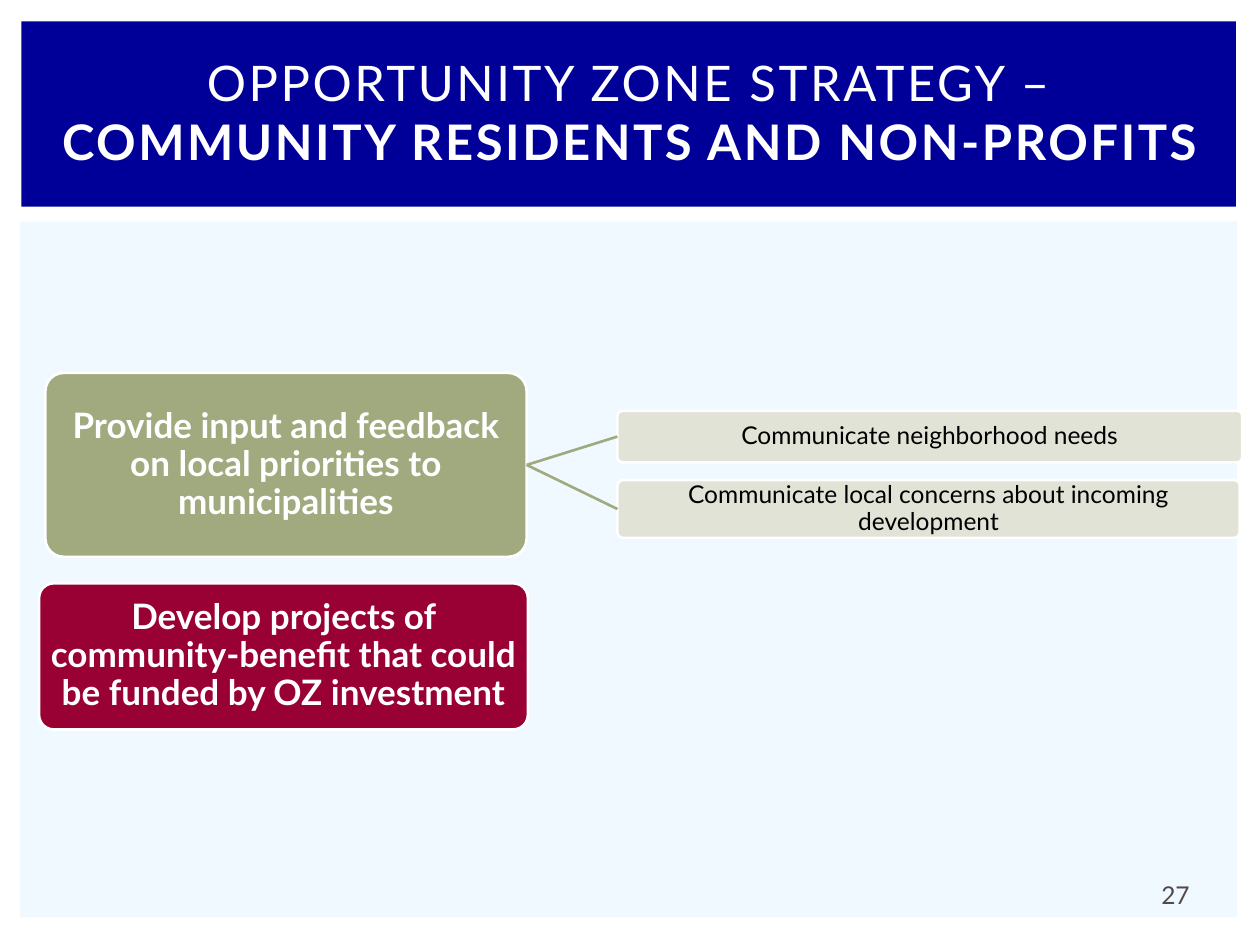
from dataclasses import dataclass

from lxml.etree import SubElement
from pptx import Presentation
from pptx.dml.color import RGBColor
from pptx.enum.shapes import MSO_CONNECTOR, MSO_SHAPE
from pptx.enum.text import MSO_ANCHOR, PP_ALIGN
from pptx.oxml.ns import qn
from pptx.shapes.autoshape import Shape
from pptx.slide import Slide
from pptx.text.text import TextFrame
from pptx.util import Inches, Pt


@dataclass(frozen=True)
class Theme:
    font: str = "Lato"
    white: str = "FFFFFF"
    black: str = "000000"
    grey: str = "534949"
    navy: str = "000099"
    sky: str = "EFF9FF"
    sage: str = "A1AA7E"
    pale: str = "E0E3D5"
    wine: str = "990033"
    title: int = 28
    head: int = 20
    note: int = 14
    rule: float = 1.5
    track: int = 150


@dataclass(frozen=True)
class Area:
    left: float
    top: float
    width: float
    height: float

    def span(self) -> tuple[int, ...]:
        return tuple(Inches(n) for n in (self.left, self.top, self.width, self.height))


@dataclass(frozen=True)
class Node:
    area: Area
    text: str
    fill: str
    ink: str
    size: int
    bold: bool = False


THEME = Theme()


def color(code: str) -> RGBColor:
    return RGBColor.from_string(code)


def style(frame: TextFrame, ink: str, size: int) -> None:
    frame.word_wrap = True
    frame.vertical_anchor = MSO_ANCHOR.MIDDLE
    for para in frame.paragraphs:
        para.alignment = PP_ALIGN.CENTER
        para.font.name = THEME.font
        para.font.size = Pt(size)
        para.font.color.rgb = color(ink)


def panel(slide: Slide, area: Area, fill: str, kind=MSO_SHAPE.RECTANGLE) -> Shape:
    shape = slide.shapes.add_shape(kind, *area.span())
    shape.shadow.inherit = False
    shape.fill.solid()
    shape.fill.fore_color.rgb = color(fill)
    shape.line.fill.background()
    return shape


def box(slide: Slide, node: Node) -> Shape:
    shape = panel(slide, node.area, node.fill, MSO_SHAPE.ROUNDED_RECTANGLE)
    shape.adjustments[0] = 0.1
    shape.line.color.rgb = color(THEME.white)
    shape.line.width = Pt(THEME.rule)
    frame = shape.text_frame
    frame.text = node.text
    frame.margin_left = frame.margin_right = Inches(0.01)
    frame.margin_top = frame.margin_bottom = Inches(0.01)
    style(frame, node.ink, node.size)
    para = frame.paragraphs[0]
    para.line_spacing = 0.9
    para.font.bold = node.bold
    return shape


def link(slide: Slide, start: Shape, end: Shape) -> None:
    line = slide.shapes.add_connector(MSO_CONNECTOR.STRAIGHT, 0, 0, 0, 0)
    line.begin_connect(start, 3)
    line.end_connect(end, 1)
    line.line.color.rgb = color(THEME.sage)
    line.line.width = Pt(THEME.rule)
    SubElement(line._element.spPr, qn("a:effectLst"))


def label(slide: Slide, area: Area, runs: list[tuple[str, bool]],
          ink: str, size: int, track: int = 0) -> None:
    frame = slide.shapes.add_textbox(*area.span()).text_frame
    for text, bold in runs:
        run = frame.paragraphs[0].add_run()
        run.text = text
        run.font.bold = bold
        if track:
            run._r.get_or_add_rPr().set("spc", str(track))
    style(frame, ink, size)


def main() -> None:
    deck = Presentation()
    deck.slide_width, deck.slide_height = Inches(10), Inches(7.5)
    slide = deck.slides.add_slide(deck.slide_layouts[6])

    panel(slide, Area(0.16, 1.76, 9.66, 5.52), THEME.sky)
    panel(slide, Area(0.17, 0.17, 9.64, 1.47), THEME.navy)

    root = box(slide, Node(
        Area(0.36, 2.96, 3.82, 1.46),
        "Provide input and feedback on local priorities to municipalities",
        THEME.sage, THEME.white, THEME.head, True))
    leaves = [
        (Area(4.9, 3.26, 4.96, 0.41), "Communicate neighborhood needs"),
        (Area(4.9, 3.81, 4.94, 0.46),
         "Communicate local concerns about incoming development"),
    ]
    for area, text in leaves:
        leaf = box(slide, Node(area, text, THEME.pale, THEME.black, THEME.note))
        link(slide, root, leaf)
    box(slide, Node(
        Area(0.31, 4.63, 3.88, 1.16),
        "Develop projects of community-benefit that could be funded by OZ investment",
        THEME.wine, THEME.white, THEME.head, True))

    label(slide, Area(0.17, 0.31, 9.66, 1.15),
          [("OPPORTUNITY ZONE STRATEGY – ", False),
           ("COMMUNITY RESIDENTS AND NON-PROFITS", True)],
          THEME.white, THEME.title, THEME.track)
    label(slide, Area(9.01, 6.95, 0.64, 0.3), [("27", False)], THEME.grey, THEME.note)

    deck.save("out.pptx")


if __name__ == "__main__":
    main()
